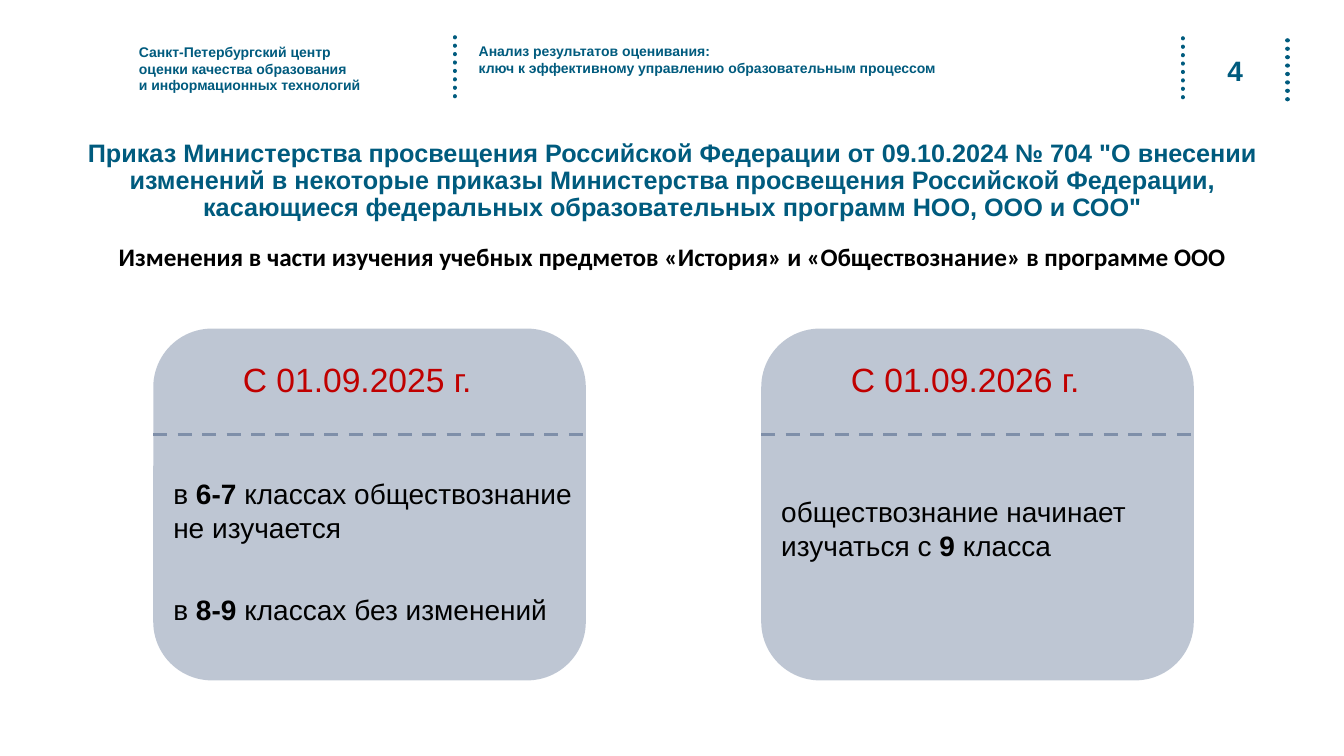
from lxml import etree
from pptx import Presentation
from pptx.dml.color import RGBColor
from pptx.enum.dml import MSO_LINE
from pptx.enum.shapes import MSO_CONNECTOR, MSO_SHAPE
from pptx.enum.text import MSO_ANCHOR, MSO_AUTO_SIZE, PP_ALIGN
from pptx.oxml.ns import qn
from pptx.util import Inches, Pt

STRAIGHT = MSO_CONNECTOR.STRAIGHT
ROUNDED = MSO_SHAPE.ROUNDED_RECTANGLE
DOTS, DASHES = MSO_LINE.ROUND_DOT, MSO_LINE.DASH
TOP, MIDDLE = MSO_ANCHOR.TOP, MSO_ANCHOR.MIDDLE
LEFT, CENTER = PP_ALIGN.LEFT, PP_ALIGN.CENTER
COLORS = {"teal": "005B7E", "slate": "7F8FA9", "red": "C00000", "black": "000000"}

prs = Presentation()
prs.slide_width, prs.slide_height = Inches(13.33), Inches(7.5)
slide = prs.slides.add_slide(prs.slide_layouts[5])


def write(box, lines, size, color, bold=False, font="Arial",
          align=LEFT, anchor=TOP, spacing=1.0):
    frame = box.text_frame
    frame.word_wrap = True
    frame.auto_size = MSO_AUTO_SIZE.NONE
    frame.vertical_anchor = anchor
    paragraph = frame.paragraphs[0]
    paragraph.alignment = align
    paragraph.line_spacing = spacing
    for number, line in enumerate(lines):
        if number:
            paragraph.add_line_break()
        for part, strong in line:
            run = paragraph.add_run()
            run.text = part
            run.font.name = font
            run.font.size = Pt(size)
            run.font.bold = bold or strong
            run.font.color.rgb = RGBColor.from_string(COLORS[color])


def rule(x1, y1, x2, y2, color, width, dash):
    line = slide.shapes.add_connector(
        STRAIGHT, Inches(x1), Inches(y1), Inches(x2), Inches(y2))
    line.line.color.rgb = RGBColor.from_string(COLORS[color])
    line.line.width = Pt(width)
    line.line.dash_style = dash
    etree.SubElement(line._element.spPr, qn("a:effectLst"))
    return line


for x, top in ((4.51, 0.37), (11.73, 0.38), (12.77, 0.4)):
    divider = rule(x, top, x, 0.99, "teal", 3, DOTS)
    divider.line._get_or_add_ln().set("cap", "rnd")

title = slide.shapes.title
title.left, title.top = Inches(0.63), Inches(1.26)
title.width, title.height = Inches(12.08), Inches(1.08)
write(title, [[(
    'Приказ Министерства просвещения Российской Федерации от 09.10.2024 № 704 '
    '"О внесении изменений в некоторые приказы Министерства просвещения '
    'Российской Федерации, касающиеся федеральных образовательных программ '
    'НОО, ООО и СОО"', False)]],
    18, "teal", bold=True, align=CENTER, anchor=MIDDLE, spacing=0.9)

headers = (
    (1.28, 0.38, 2.59, 0.61, ("Санкт-Петербургский центр",
                              "оценки качества образования",
                              "и информационных технологий")),
    (4.65, 0.37, 6.33, 0.62, ("Анализ результатов оценивания:",
                              "ключ к эффективному управлению образовательным процессом")),
)
for x, y, width, height, lines in headers:
    header = slide.shapes.add_textbox(Inches(x), Inches(y), Inches(width), Inches(height))
    write(header, [[(line, False)] for line in lines], 10, "teal", bold=True)

page_number = slide.shapes.add_textbox(Inches(11.98), Inches(0.43), Inches(0.54), Inches(0.53))
write(page_number, [[("4", False)]], 20, "teal", bold=True, align=CENTER, anchor=MIDDLE)

subtitle = slide.shapes.add_textbox(Inches(0.63), Inches(2.02), Inches(12.08), Inches(1.08))
write(subtitle, [[(
    "Изменения в части изучения учебных предметов «История» и «Обществознание» "
    "в программе ООО", False)]],
    18, "black", bold=True, font="Calibri", align=CENTER, anchor=MIDDLE, spacing=0.9)

CARD_TOP, CARD_WIDTH, CARD_HEIGHT = 3.26, 4.29, 3.49
cards = (
    (1.52, "С 01.09.2025 г.", (
        (4.68, 0.77, (("в ", False), ("6-7 ", True),
                      ("классах обществознание не изучается", False))),
        (5.83, 0.44, (("в ", False), ("8-9", True),
                      (" классах без изменений", False))))),
    (7.55, "С 01.09.2026 г.", (
        (4.86, 0.77, (("обществознание начинает изучаться с ", False),
                      ("9", True), (" класса", False))),)),
)
for x, start_date, changes in cards:
    card = slide.shapes.add_shape(
        ROUNDED, Inches(x), Inches(CARD_TOP), Inches(CARD_WIDTH), Inches(CARD_HEIGHT))
    card.shadow.inherit = False
    card.line.fill.background()
    card.fill.solid()
    card.fill.fore_color.rgb = RGBColor.from_string(COLORS["slate"])
    tint = card._element.spPr.find(qn("a:solidFill"))[0]
    etree.SubElement(tint, qn("a:alpha")).set("val", "50000")

    rule(x, CARD_TOP + 1.05, x + CARD_WIDTH, CARD_TOP + 1.05, "slate", 2.5, DASHES)

    date_box = slide.shapes.add_textbox(
        Inches(x + 0.79), Inches(CARD_TOP + 0.25), Inches(2.75), Inches(0.5))
    write(date_box, [[(start_date, False)]], 24, "red")

    for y, height, parts in changes:
        change = slide.shapes.add_textbox(
            Inches(x + 0.1), Inches(y), Inches(CARD_WIDTH - 0.1), Inches(height))
        write(change, [parts], 20, "black")

prs.save("out.pptx")
